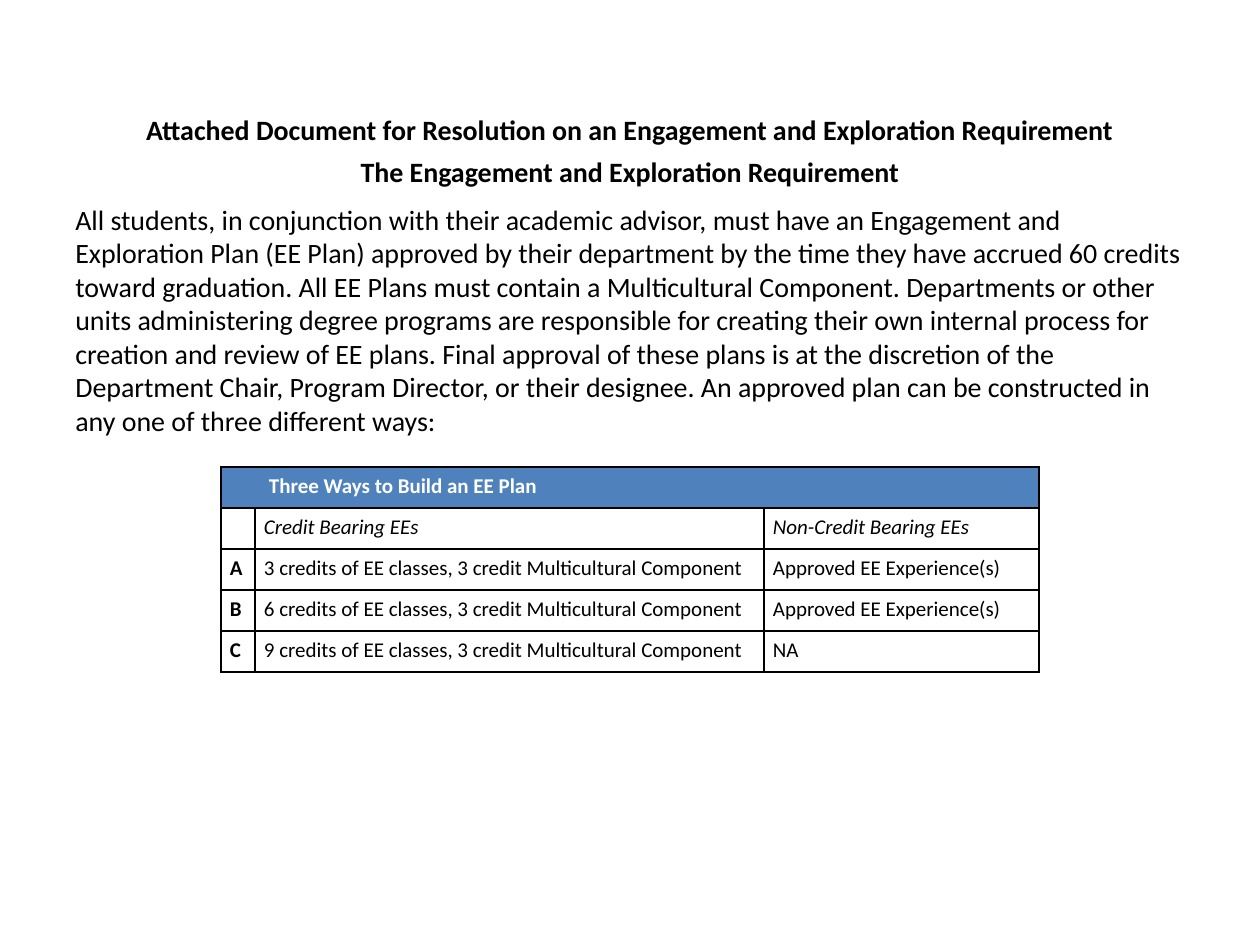
import pptx
import pptx.dml.color
import pptx.enum.text
import pptx.oxml
import pptx.oxml.ns
import pptx.util

EMU_PER_PX = 914400 // 126
FONT = "Calibri"
BLACK, WHITE, BLUE = "000000", "FFFFFF", "4F81BD"

TITLES = [
    "Attached Document for Resolution on an Engagement and Exploration Requirement",
    "The Engagement and Exploration Requirement",
]
BODY = (
    "All students, in conjunction with their academic advisor, must have an "
    "Engagement and Exploration Plan (EE Plan) approved by their department by "
    "the time they have accrued 60 credits toward graduation. All EE Plans must "
    "contain a Multicultural Component. Departments or other units administering "
    "degree programs are responsible for creating their own internal process for "
    "creation and review of EE plans. Final approval of these plans is at the "
    "discretion of the Department Chair, Program Director, or their designee. An "
    "approved plan can be constructed in any one of three different ways:"
)
PLAN_ROWS = [
    ["Three Ways to Build an EE Plan", "", ""],
    ["", "Credit Bearing EEs", "Non-Credit Bearing EEs"],
    ["A", "3 credits of EE classes, 3 credit Multicultural Component",
     "Approved EE Experience(s)"],
    ["B", "6 credits of EE classes, 3 credit Multicultural Component",
     "Approved EE Experience(s)"],
    ["C", "9 credits of EE classes, 3 credit Multicultural Component", "NA"],
]


def px(length):
    return pptx.util.Emu(length * EMU_PER_PX)


def rgb(value):
    return pptx.dml.color.RGBColor.from_string(value)


def style_font(font, size, color=BLACK, bold=False, italic=False):
    font.name = FONT
    font.size = pptx.util.Pt(size)
    font.color.rgb = rgb(color)
    font.bold = bold
    font.italic = italic


def add_introduction(slide, left, top, width, height):
    """Add the centred titles and the paragraph under them."""
    box = slide.shapes.add_textbox(px(left), px(top), px(width), px(height))
    frame = box.text_frame
    frame.word_wrap = True
    frame.margin_top = px(8)
    frame.text = "\n".join(TITLES + [BODY])
    for index, paragraph in enumerate(frame.paragraphs):
        is_title = index < len(TITLES)
        paragraph.line_spacing = pptx.util.Pt(19.2)
        if index:
            paragraph.space_before = pptx.util.Pt(4.8 if is_title else 7.7)
        if is_title:
            paragraph.alignment = pptx.enum.text.PP_ALIGN.CENTER
        for run in paragraph.runs:
            style_font(run.font, 16, bold=is_title)


def add_borders(cell):
    properties = cell._tc.get_or_add_tcPr()
    for side in ("lnL", "lnR", "lnT", "lnB"):
        properties.append(pptx.oxml.parse_xml(
            f'<a:{side} {pptx.oxml.ns.nsdecls("a")} w="12700"><a:solidFill>'
            f'<a:srgbClr val="{BLACK}"/></a:solidFill></a:{side}>'))


def fill_cell(cell, text, row, column):
    is_header = row == 0
    add_borders(cell)
    cell.fill.solid()
    cell.fill.fore_color.rgb = rgb(BLUE if is_header else WHITE)
    cell.vertical_anchor = pptx.enum.text.MSO_ANCHOR.MIDDLE
    cell.margin_left = px(48 if is_header else 9)
    cell.margin_right = cell.margin_top = cell.margin_bottom = 0
    cell.text_frame.text = text
    paragraph = cell.text_frame.paragraphs[0]
    paragraph.line_spacing = pptx.util.Pt(13.8 if is_header else 13.6)
    style_font(paragraph.font, 12)
    for run in paragraph.runs:
        style_font(run.font, 12, WHITE if is_header else BLACK,
                   bold=is_header or column == 0, italic=row == 1)


def add_plan_table(slide, left, top, column_widths, row_height):
    row_count, column_count = len(PLAN_ROWS), len(column_widths)
    table = slide.shapes.add_table(
        row_count, column_count, px(left), px(top),
        px(sum(column_widths)), px(row_height * row_count)).table
    for column, width in zip(table.columns, column_widths):
        column.width = px(width)
    for row_index, texts in enumerate(PLAN_ROWS):
        table.rows[row_index].height = px(row_height)
        for column_index, text in enumerate(texts):
            fill_cell(table.cell(row_index, column_index), text,
                      row_index, column_index)
    table.cell(0, 0).merge(table.cell(0, column_count - 1))


def main():
    presentation = pptx.Presentation()
    presentation.slide_width = px(1260)
    presentation.slide_height = px(945)
    slide = presentation.slides.add_slide(presentation.slide_layouts[6])
    add_introduction(slide, 63, 105, 1134, 346)
    add_plan_table(slide, 221, 467, [34, 509, 275], 41)
    presentation.save("out.pptx")


if __name__ == "__main__":
    main()
